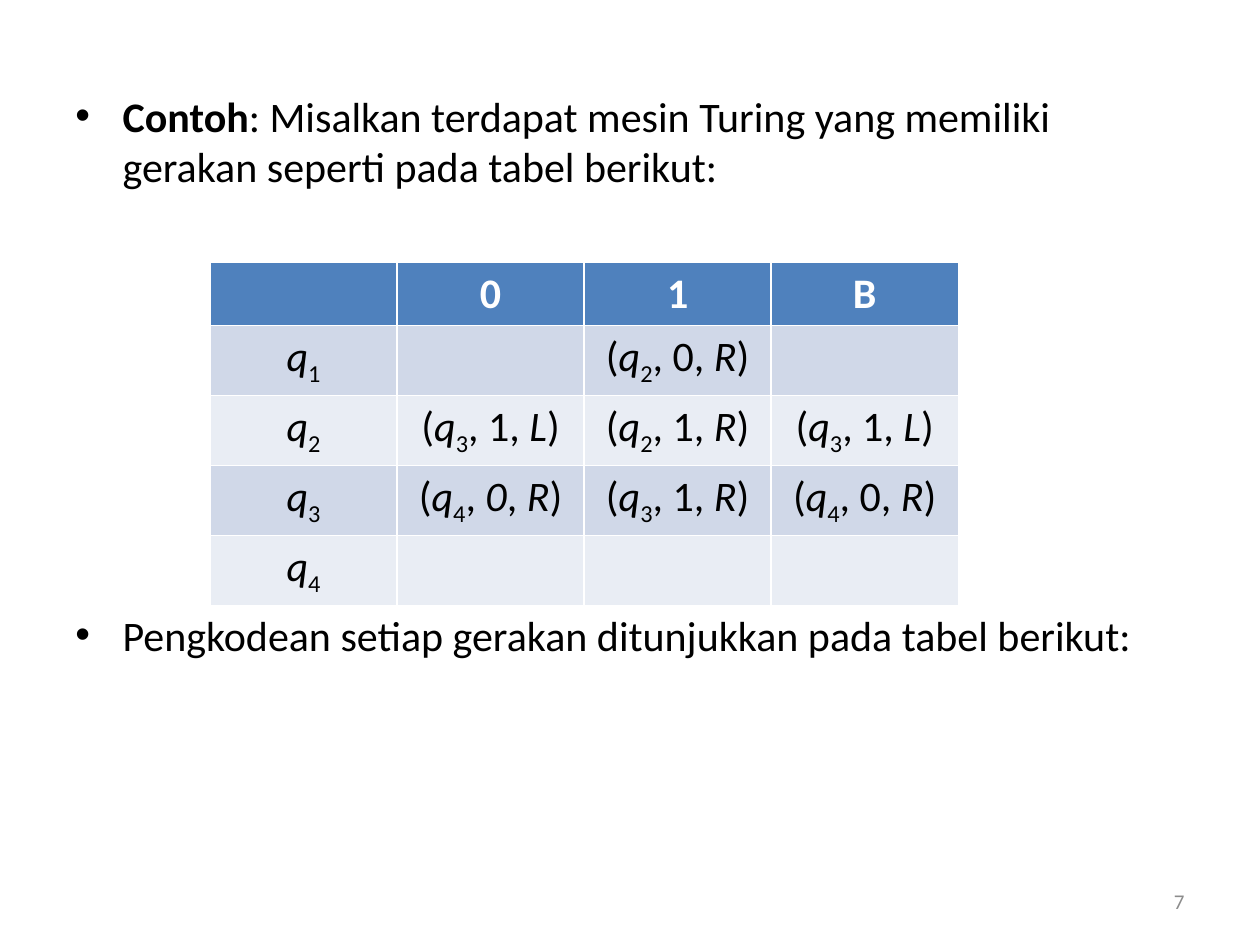
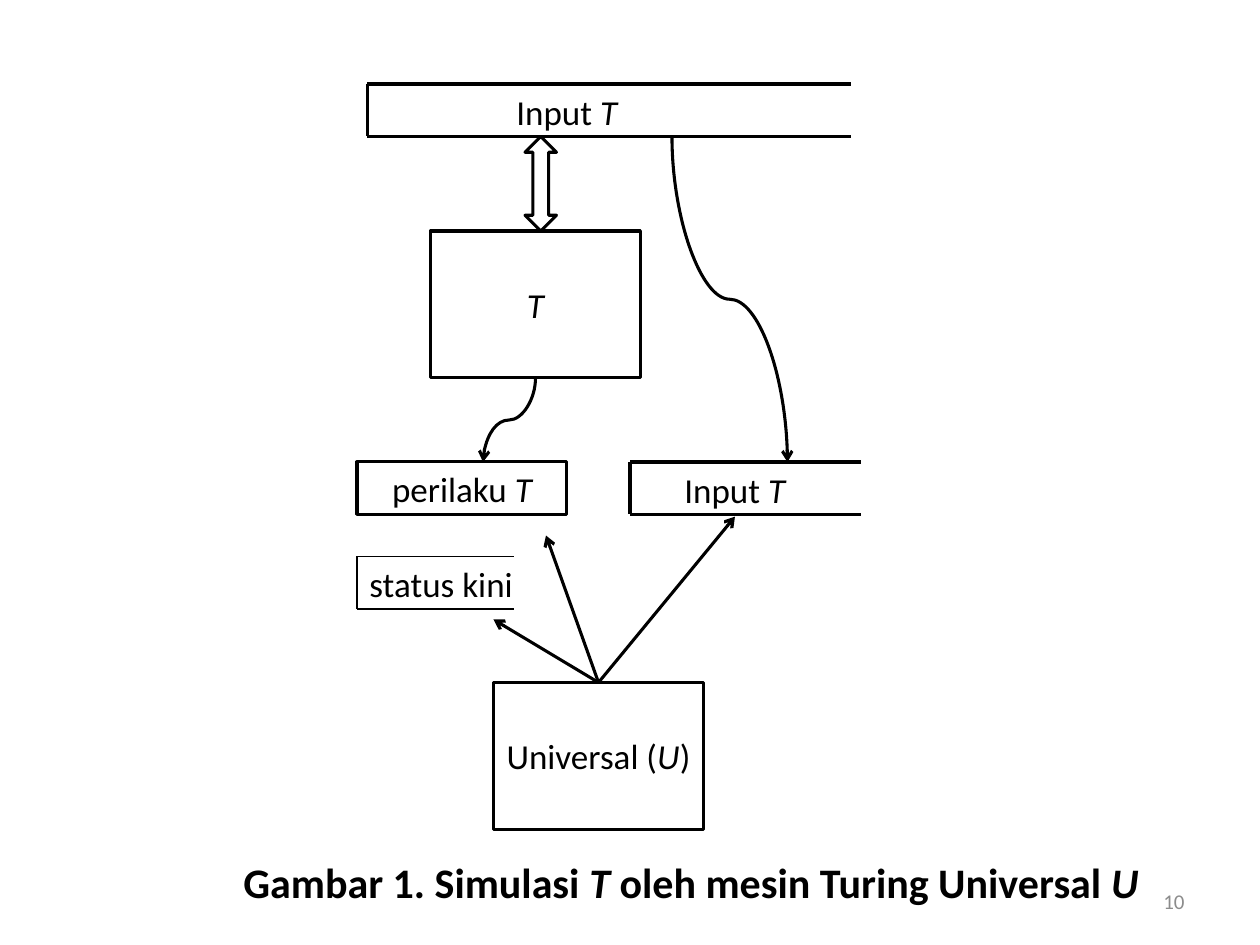
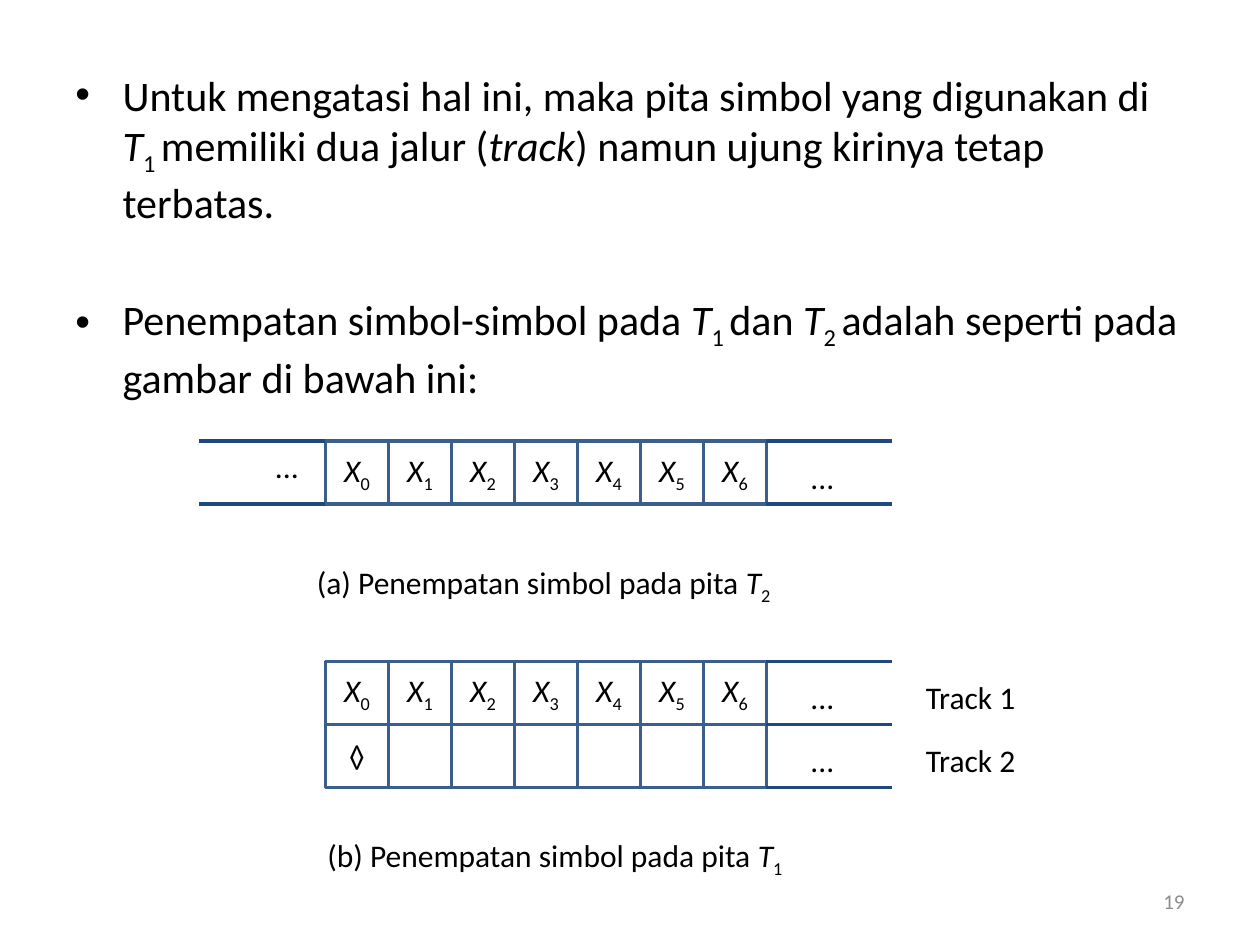
from dataclasses import dataclass
from typing import NamedTuple

from lxml.etree import SubElement
from pptx import Presentation
from pptx.dml.color import RGBColor
from pptx.enum.shapes import MSO_CONNECTOR, MSO_SHAPE
from pptx.enum.text import MSO_ANCHOR, MSO_AUTO_SIZE, PP_ALIGN
from pptx.oxml.ns import qn
from pptx.util import Emu, Inches, Pt

COLORS = {
    "text": "000000",
    "number": "8C8C8C",
    "header": "4F81BD",
    "header_text": "FFFFFF",
    "odd_row": "D0D8E8",
    "even_row": "E9EDF4",
    "ink": "000000",
    "cell": "3A5F8C",
    "tape": "1F497D",
}
FONT = "Calibri"
SLIDE_W, SLIDE_H = Inches(10), Inches(7.5)
COLS, ROWS = 120, 90
INK_WIDTH, THIN_WIDTH, TAPE_WIDTH = 1.75, 0.75, 2
CELL, CELL_COUNT, TAPE_LEFT, TAPE_TAIL = 6, 7, 31, 12


class Run(NamedTuple):
    text: str
    italic: bool = False
    bold: bool = False
    sub: bool = False


class Box(NamedTuple):
    col: float
    row: float
    cols: float
    rows: float


class Para(NamedTuple):
    runs: list[Run]
    gap: float = 0


@dataclass
class Label:
    box: Box
    runs: list[Run]
    size: int


@dataclass
class OpenStrip:
    box: Box
    width: float = INK_WIDTH


@dataclass
class Track:
    row: int
    cells: list[list[Run]]


def x(col: float) -> Emu:
    return Emu(round(SLIDE_W * col / COLS))


def y(row: float) -> Emu:
    return Emu(round(SLIDE_H * row / ROWS))


def place(box: Box) -> tuple[Emu, Emu, Emu, Emu]:
    return x(box.col), y(box.row), x(box.cols), y(box.rows)


def rgb(name: str) -> RGBColor:
    return RGBColor.from_string(COLORS[name])


def it(text: str) -> Run:
    return Run(text, italic=True)


def symbol(name: str, index: str) -> list[Run]:
    return [it(name), Run(index, sub=True)]


def move(state: int, write: str, direction: str) -> list[Run]:
    return [Run("("), *symbol("q", str(state)), Run(f", {write}, "), it(direction), Run(")")]


def add_runs(p, runs: list[Run], size: int, color: str = "text") -> None:
    for run in runs:
        r = p.add_run()
        r.text = run.text
        font = r.font
        font.name, font.size = FONT, Pt(size)
        font.bold, font.italic = run.bold, run.italic
        font.color.rgb = rgb(color)
        if run.sub:
            r._r.get_or_add_rPr().set("baseline", "-25000")


def add_label(slide, label: Label) -> None:
    tf = slide.shapes.add_textbox(*place(label.box)).text_frame
    tf.word_wrap = False
    tf.auto_size = MSO_AUTO_SIZE.SHAPE_TO_FIT_TEXT
    add_runs(tf.paragraphs[0], label.runs, label.size)


def add_page_number(slide, number: int) -> None:
    tf = slide.shapes.add_textbox(*place(Box(86, 83.4, 28, 4.8))).text_frame
    tf.word_wrap = True
    tf.vertical_anchor = MSO_ANCHOR.MIDDLE
    p = tf.paragraphs[0]
    p.alignment = PP_ALIGN.RIGHT
    add_runs(p, [Run(str(number))], 12, "number")


def add_body(slide, box: Box, paras: list[Para]) -> None:
    tf = slide.shapes.add_textbox(*place(box)).text_frame
    tf.word_wrap = True
    for i, para in enumerate(paras):
        p = tf.add_paragraph() if i else tf.paragraphs[0]
        p.space_before = Pt(para.gap)
        pPr = p._p.get_or_add_pPr()
        indent = Inches(0.375)
        pPr.set("marL", str(indent))
        pPr.set("indent", str(-indent))
        SubElement(pPr, qn("a:buFont")).set("typeface", "Arial")
        SubElement(pPr, qn("a:buChar")).set("char", "•")
        add_runs(p, para.runs, 24)


def add_outline(slide, kind: MSO_SHAPE, box: Box, runs: list[Run], size: int,
                color: str = "ink", width: float = INK_WIDTH):
    sp = slide.shapes.add_shape(kind, *place(box))
    sp.shadow.inherit = False
    sp.fill.background()
    sp.line.color.rgb = rgb(color)
    sp.line.width = Pt(width)
    tf = sp.text_frame
    tf.word_wrap = True
    tf.vertical_anchor = MSO_ANCHOR.MIDDLE
    p = tf.paragraphs[0]
    p.alignment = PP_ALIGN.CENTER
    add_runs(p, runs, size)
    return sp


def add_line(slide, start: tuple[float, float], end: tuple[float, float],
             color: str = "ink", width: float = INK_WIDTH, arrow: bool = False,
             kind: MSO_CONNECTOR = MSO_CONNECTOR.STRAIGHT):
    line = slide.shapes.add_connector(kind, x(start[0]), y(start[1]), x(end[0]), y(end[1]))
    line.line.color.rgb = rgb(color)
    line.line.width = Pt(width)
    if arrow:
        SubElement(line.line._get_or_add_ln(), qn("a:tailEnd")).set("type", "arrow")
    SubElement(line._element.spPr, qn("a:effectLst"))
    return line


def add_falling_curve(slide, start: tuple[float, float], end: tuple[float, float]) -> None:
    dx, dy = end[0] - start[0], end[1] - start[1]
    mid_col, mid_row = (start[0] + end[0]) / 2, (start[1] + end[1]) / 2
    turn = 1 if dx < 0 else -1
    line = add_line(slide, (mid_col - turn * dy / 2, mid_row - abs(dx) / 2),
                    (mid_col + turn * dy / 2, mid_row + abs(dx) / 2),
                    arrow=True, kind=MSO_CONNECTOR.CURVE)
    line.rotation = 90 if turn > 0 else 270


def add_open_strip(slide, strip: OpenStrip) -> None:
    left, top, cols, rows = strip.box
    for row in (top, top + rows):
        add_line(slide, (left, row), (left + cols, row), width=strip.width)
    add_line(slide, (left, top), (left, top + rows), width=strip.width)


def add_moves_table(slide, box: Box, rows: list[list[list[Run]]]) -> None:
    table = slide.shapes.add_table(len(rows), len(rows[0]), *place(box)).table
    for i, row in enumerate(rows):
        fill = "header" if i == 0 else "odd_row" if i % 2 else "even_row"
        for j, runs in enumerate(row):
            cell = table.cell(i, j)
            cell.fill.solid()
            cell.fill.fore_color.rgb = rgb(fill)
            p = cell.text_frame.paragraphs[0]
            p.alignment = PP_ALIGN.CENTER
            add_runs(p, runs, 24, "text" if i else "header_text")


def add_tape_ends(slide, row: float, left: float) -> None:
    add_line(slide, (left, row), (left + TAPE_TAIL, row), "tape", TAPE_WIDTH)


def add_track(slide, track: Track) -> None:
    for i, runs in enumerate(track.cells):
        box = Box(TAPE_LEFT + i * CELL, track.row, CELL, CELL)
        add_outline(slide, MSO_SHAPE.RECTANGLE, box, runs, 18, "cell", TAPE_WIDTH)
    add_label(slide, Label(Box(76, track.row + 1, 4.7, 4.8), [Run("...")], 18))


def build_moves(slide) -> None:
    add_body(slide, Box(6, 8, 108, 72.4), [
        Para([Run("Contoh", bold=True),
              Run(": Misalkan terdapat mesin Turing yang memiliki gerakan seperti pada tabel berikut:")]),
        Para([Run("Pengkodean setiap gerakan ditunjukkan pada tabel berikut:")], 239),
    ])
    header = [[], *([Run(mark, bold=True)] for mark in "01B")]
    italic_zero = [Run("("), *symbol("q", "4"), Run(", "), it("0"), Run(", "), it("R"), Run(")")]
    moves = [
        [[], move(2, "0", "R"), []],
        [move(3, "1", "L"), move(2, "1", "R"), move(3, "1", "L")],
        [italic_zero, move(3, "1", "R"), move(4, "0", "R")],
        [[], [], []],
    ]
    states = [[symbol("q", str(i)), *row] for i, row in enumerate(moves, 1)]
    add_moves_table(slide, Box(20, 25, 71.28, 30), [header, *states])


def build_simulation(slide) -> None:
    for strip in (OpenStrip(Box(35, 8, 46, 5)), OpenStrip(Box(60, 44, 22, 5)),
                  OpenStrip(Box(34, 53, 15, 5), THIN_WIDTH)):
        add_open_strip(slide, strip)
    input_t = [Run("Input "), it("T")]
    for label in (
        Label(Box(48, 8, 12.1, 5.3), input_t, 20),
        Label(Box(64, 44, 12.1, 5.3), input_t, 20),
        Label(Box(34, 53, 16.2, 5.3), [Run("status kini")], 20),
        Label(Box(22, 81, 88.4, 6),
              [Run("Gambar 1. Simulasi ", bold=True), Run("T ", True, True),
               Run("oleh mesin Turing Universal ", bold=True), Run("U", True, True)], 24),
    ):
        add_label(slide, label)
    rect = MSO_SHAPE.RECTANGLE
    add_outline(slide, rect, Box(41, 22, 20, 14), [it("T")], 20)
    add_outline(slide, MSO_SHAPE.UP_DOWN_ARROW, Box(50, 13, 3, 9), [], 20)
    add_outline(slide, rect, Box(34, 44, 20, 5), [Run("perilaku"), it(" T")], 20)
    universal = add_outline(slide, rect, Box(47, 65, 20, 14),
                            [Run("Universal ("), it("U"), Run(")")], 20)
    add_falling_curve(slide, (51, 36), (46, 44))
    add_falling_curve(slide, (64, 13), (75, 44))
    for target in ((70, 49.2), (47, 59), (52, 51)):
        add_line(slide, (57, 65), target, arrow=True).begin_connect(universal, 0)


def build_tapes(slide) -> None:
    add_body(slide, Box(6, 6, 108, 74.4), [
        Para([Run("Untuk mengatasi hal ini, maka pita simbol yang digunakan di "),
              *symbol("T", "1 "), Run("memiliki dua jalur ("), it("track"),
              Run(") namun ujung kirinya tetap terbatas.")]),
        Para([Run("Penempatan simbol-simbol pada "), *symbol("T", "1 "), Run("dan "),
              *symbol("T", "2 "), Run("adalah seperti pada gambar di bawah ini:")], 38),
    ])
    symbols = [symbol("X", str(i)) for i in range(CELL_COUNT)]
    marker = [[Run("◊")], *([] for _ in range(CELL_COUNT - 1))]
    for track in (Track(42, symbols), Track(63, symbols), Track(69, marker)):
        add_track(slide, track)
    tape_right = TAPE_LEFT + CELL * CELL_COUNT
    for row in (42, 48, 63, 69, 75):
        add_tape_ends(slide, row, tape_right)
    for row in (42, 48):
        add_tape_ends(slide, row, TAPE_LEFT - TAPE_TAIL)
    for label in (
        Label(Box(25, 42, 4.7, 4.8), [Run("...")], 18),
        Label(Box(29, 53, 46.8, 4.8),
              [Run("(a) Penempatan simbol pada pita "), *symbol("T", "2")], 18),
        Label(Box(30, 79, 47.5, 4.8),
              [Run("(b) Penempatan simbol pada pita "), *symbol("T", "1")], 18),
        Label(Box(87, 64, 11, 4.8), [Run("Track 1")], 18),
        Label(Box(87, 70, 11, 4.8), [Run("Track 2")], 18),
    ):
        add_label(slide, label)


def main() -> None:
    prs = Presentation()
    prs.slide_width, prs.slide_height = SLIDE_W, SLIDE_H
    for number, build in ((7, build_moves), (10, build_simulation), (19, build_tapes)):
        slide = prs.slides.add_slide(prs.slide_layouts[6])
        build(slide)
        add_page_number(slide, number)
    prs.save("out.pptx")


if __name__ == "__main__":
    main()
